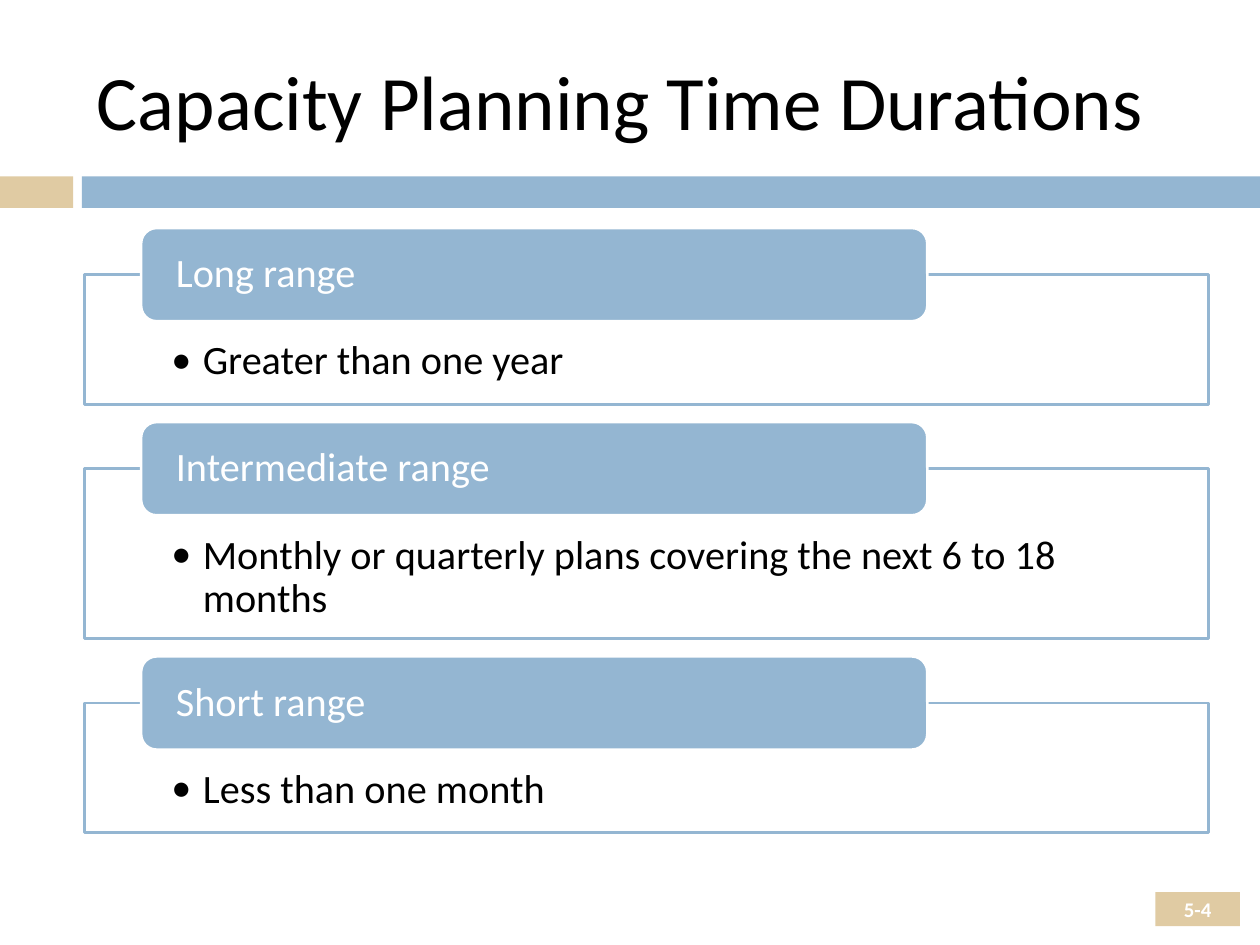
"""Build the capacity planning time durations slide."""
from dataclasses import dataclass
from typing import Optional

from lxml.etree import SubElement
from pptx import Presentation
from pptx.dml.color import RGBColor
from pptx.enum.shapes import MSO_SHAPE
from pptx.enum.text import MSO_ANCHOR, PP_ALIGN
from pptx.oxml.ns import qn
from pptx.util import Inches, Pt

COLORS = {"blue": "94B6D2", "sand": "E0CBA3", "white": "FFFFFF", "black": "000000"}
FONT = "Calibri"
FIRST_TOP = 2.18
PANEL_GAP = 0.51
HEADER_RISE = 0.37


@dataclass
class Duration:
    name: str
    detail: str
    height: float


DURATIONS = [
    Duration("Long range", "Greater than one year", 1.03),
    Duration("Intermediate range",
             "Monthly or quarterly plans covering the next 6 to 18 months", 1.35),
    Duration("Short range", "Less than one month", 1.03),
]


def color(name: str) -> RGBColor:
    return RGBColor.from_string(COLORS[name])


def add_block(page, left: float, top: float, width: float, height: float, fill: str,
              line: Optional[str] = None, kind=MSO_SHAPE.RECTANGLE):
    shape = page.shapes.add_shape(
        kind, Inches(left), Inches(top), Inches(width), Inches(height))
    shape.shadow.inherit = False
    shape.fill.solid()
    shape.fill.fore_color.rgb = color(fill)
    if line:
        shape.line.color.rgb = color(line)
        shape.line.width = Pt(1.5)
    else:
        shape.line.fill.background()
    return shape


def write(box, text: str, *, size: float, ink: str, bold: bool = False,
          align=PP_ALIGN.LEFT, anchor=MSO_ANCHOR.MIDDLE,
          insets: tuple = (0.1, 0.05, 0.1, 0.05), spacing: float = 1.0,
          bullet: bool = False) -> None:
    frame = box.text_frame
    frame.word_wrap = True
    frame.vertical_anchor = anchor
    (frame.margin_left, frame.margin_top,
     frame.margin_right, frame.margin_bottom) = map(Inches, insets)
    para = frame.paragraphs[0]
    para.alignment = align
    para.line_spacing = spacing
    if bullet:
        para.level = 1
        properties = para._p.get_or_add_pPr()
        properties.set("marL", str(Inches(0.25)))
        properties.set("indent", str(Inches(-0.25)))
        SubElement(properties, qn("a:buFont")).set("typeface", FONT)
        SubElement(properties, qn("a:buChar")).set("char", "•")
    span = para.add_run()
    span.text = text
    span.font.name = FONT
    span.font.size = Pt(size)
    span.font.bold = bold
    span.font.color.rgb = color(ink)


def add_duration(page, duration: Duration, top: float) -> None:
    panel = add_block(page, 0.67, top, 8.92, duration.height, "white", "blue")
    write(panel, duration.detail, size=23, ink="black", anchor=MSO_ANCHOR.TOP,
          insets=(0.69, 0.52, 0.69, 0.18), spacing=0.9, bullet=True)
    header = add_block(page, 1.12, top - HEADER_RISE, 6.24, 2 * HEADER_RISE,
                       "blue", "white", MSO_SHAPE.ROUNDED_RECTANGLE)
    write(header, duration.name, size=23, ink="white",
          insets=(0.24, 0, 0.24, 0), spacing=0.9)


def main() -> None:
    deck = Presentation()
    deck.slide_width, deck.slide_height = Inches(10), Inches(7.5)
    page = deck.slides.add_slide(deck.slide_layouts[6])

    add_block(page, 0, 1.4, 0.58, 0.25, "sand")
    add_block(page, 0.65, 1.4, 9.35, 0.25, "blue")
    title = page.shapes.add_textbox(
        Inches(0.67), Inches(0.25), Inches(8.92), Inches(1.08))
    write(title, "Capacity Planning Time Durations", size=44, ink="black")

    top = FIRST_TOP
    for duration in DURATIONS:
        add_duration(page, duration, top)
        top += duration.height + PANEL_GAP

    number = add_block(page, 9.17, 7.08, 0.67, 0.27, "sand")
    write(number, "5-4", size=11.9, ink="white", bold=True, align=PP_ALIGN.CENTER)

    deck.save("out.pptx")


if __name__ == "__main__":
    main()
